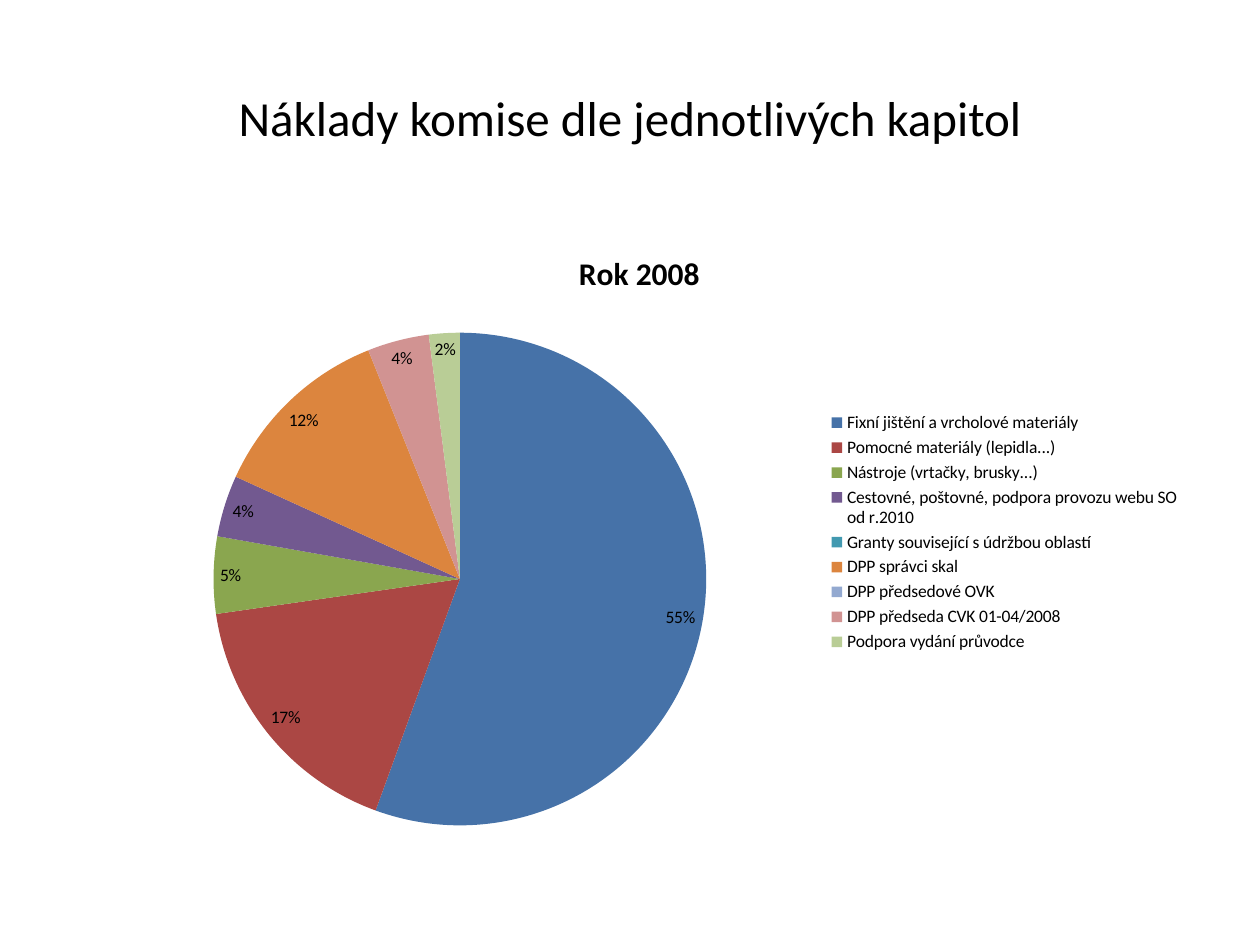
import pptx
import pptx.util
import pptx.chart.data
import pptx.dml.color
import pptx.enum.chart
import pptx.enum.text
import pptx.oxml

Inches = pptx.util.Inches
Pt = pptx.util.Pt

COLORS = {
    "text": "000000",
    "blue": "4672A8",
    "red": "AB4744",
    "green": "8AA64F",
    "purple": "725990",
    "teal": "4299B0",
    "orange": "DC853E",
    "sky": "93A9D0",
    "rose": "D19392",
    "lime": "B9CD96",
}

COSTS = [
    ("Fixní jištění a vrcholové materiály", 55, "blue"),
    ("Pomocné materiály (lepidla...)", 17, "red"),
    ("Nástroje (vrtačky, brusky...)", 5, "green"),
    ("Cestovné, poštovné, podpora provozu webu SO od r.2010", 4, "purple"),
    ("Granty související s údržbou oblastí", 0, "teal"),
    ("DPP správci skal", 12, "orange"),
    ("DPP předsedové OVK", 0, "sky"),
    ("DPP předseda CVK 01-04/2008", 4, "rose"),
    ("Podpora vydání průvodce", 2, "lime"),
]


class Deck:
    font = "Calibri"

    def __init__(self):
        self.prs = pptx.Presentation()
        self.prs.slide_width = Inches(10)
        self.prs.slide_height = Inches(7.5)
        self.slide = self.prs.slides.add_slide(self.prs.slide_layouts[5])

    def style(self, font, size, bold=False):
        font.name = self.font
        font.size = Pt(size)
        font.bold = bold
        font.color.rgb = self.color("text")

    def color(self, name):
        return pptx.dml.color.RGBColor.from_string(COLORS[name])

    def title(self, text, box):
        shape = self.slide.shapes.title
        shape.left, shape.top, shape.width, shape.height = map(Inches, box)
        frame = shape.text_frame
        frame.vertical_anchor = pptx.enum.text.MSO_ANCHOR.MIDDLE
        para = frame.paragraphs[0]
        para.alignment = pptx.enum.text.PP_ALIGN.CENTER
        run = para.add_run()
        run.text = text
        self.style(run.font, 28)

    def pie(self, head, rows, box):
        data = pptx.chart.data.CategoryChartData()
        data.categories = [name for name, _, _ in rows]
        data.add_series(head, [value for _, value, _ in rows])
        kind = pptx.enum.chart.XL_CHART_TYPE.PIE
        chart = self.slide.shapes.add_chart(kind, *map(Inches, box), data).chart
        self.style(chart.font, 10)

        chart.has_title = True
        run = chart.chart_title.text_frame.paragraphs[0].add_run()
        run.text = head
        self.style(run.font, 18, True)
        chart.chart_title.include_in_layout = False

        chart.has_legend = True
        chart.legend.position = pptx.enum.chart.XL_LEGEND_POSITION.RIGHT
        chart.legend.include_in_layout = False
        self.style(chart.legend.font, 10)

        plot = chart.plots[0]
        plot.vary_by_categories = True
        for i, (_, _, name) in enumerate(rows):
            fill = plot.series[0].points[i].format.fill
            fill.solid()
            fill.fore_color.rgb = self.color(name)

        plot.has_data_labels = True
        labels = plot.data_labels
        labels.show_value = True
        labels.number_format = '0"%";;'  # zero shares stay unlabelled
        labels.number_format_is_linked = False
        labels.position = pptx.enum.chart.XL_LABEL_POSITION.BEST_FIT
        self.style(labels.font, 10)
        return chart

    def place(self, node, after, spots, inner=False):
        """Set a manual layout, as shares of the chart, behind the given child."""
        for old in node.findall(pptx.oxml.ns.qn("c:layout")):
            node.remove(old)
        target = '<c:layoutTarget val="inner"/>' if inner else ""
        modes = "".join(f'<c:{k}Mode val="edge"/>' for k in "xy")
        sizes = "".join(f'<c:{k} val="{v}"/>' for k, v in zip("xywh", spots))
        layout = pptx.oxml.parse_xml(
            f'<c:layout {pptx.oxml.ns.nsdecls("c")}><c:manualLayout>'
            f"{target}{modes}{sizes}</c:manualLayout></c:layout>"
        )
        if after:
            node.find(pptx.oxml.ns.qn(after)).addnext(layout)
        else:
            node.insert(0, layout)


def main():
    deck = Deck()
    deck.title("Náklady komise dle jednotlivých kapitol", (0.5, 0.3, 9, 1.25))
    chart = deck.pie("Rok 2008", COSTS, (0.5, 1.75, 9, 4.95))
    area = chart.plots[0]._element.getparent()
    deck.place(area, None, (0.13, 0.18, 0.44, 0.79), inner=True)
    deck.place(chart.chart_title._element, "c:tx", (0.45, 0.04))
    deck.place(chart.legend._element, "c:legendPos", (0.67, 0.3, 0.32, 0.4))
    deck.prs.save("out.pptx")


if __name__ == "__main__":
    main()
